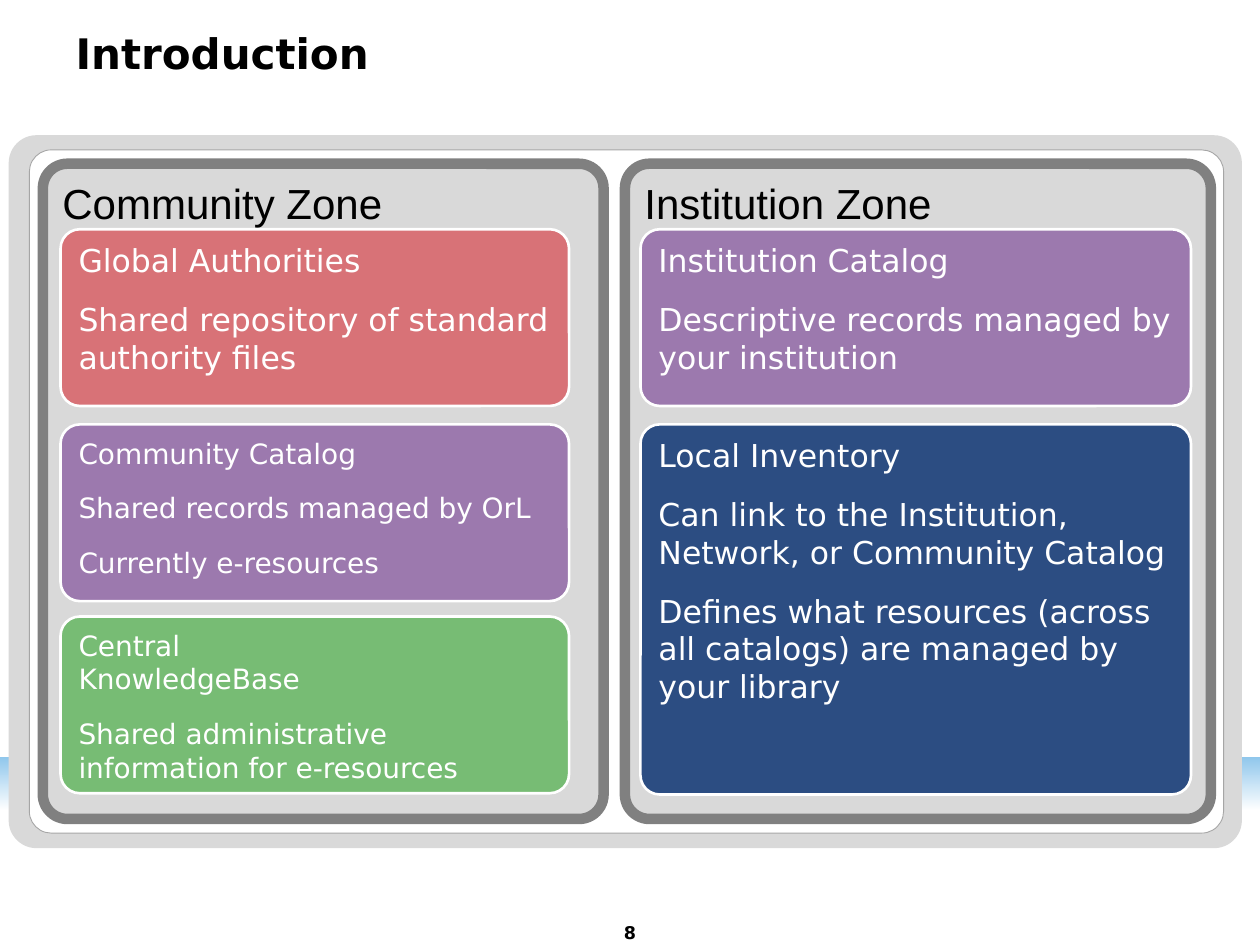
from dataclasses import dataclass

from pptx import Presentation
from pptx.dml.color import RGBColor
from pptx.enum.shapes import MSO_SHAPE as SHAPE
from pptx.enum.text import MSO_ANCHOR as ANCHOR, PP_ALIGN as ALIGN
from pptx.util import Pt

SANS = "DejaVu Sans"
PANEL = "D9D9D9"
CARD_TOPS = (131, 242.5, 352.3)
CARD_HEIGHT = 101


@dataclass
class Card:
    top: float
    height: float
    fill: str
    size: float
    lines: tuple[str, ...]


@dataclass
class Zone:
    title: str
    left: float
    width: float
    card_left: float
    card_width: float
    cards: tuple[Card, ...]


ZONES = (
    Zone("Institution Zone", 357.1, 334.8, 366, 314.6, (
        Card(CARD_TOPS[0], CARD_HEIGHT, "9C79AE", 18, (
            "Institution Catalog",
            "Descriptive records managed by your institution")),
        Card(CARD_TOPS[1], 211.5, "2C4D82", 18, (
            "Local Inventory",
            "Can link to the Institution, Network, or Community Catalog",
            "Defines what resources (across all catalogs) are managed by "
            "your library")),
    )),
    Zone("Community Zone", 24.5, 320.4, 34.6, 290.6, (
        Card(CARD_TOPS[0], CARD_HEIGHT, "D87277", 18, (
            "Global Authorities",
            "Shared repository of standard authority files")),
        Card(CARD_TOPS[1], CARD_HEIGHT, "9C79AE", 16, (
            "Community Catalog",
            "Shared records managed by OrL",
            "Currently e-resources")),
        Card(CARD_TOPS[2], CARD_HEIGHT, "77BC74", 16, (
            "Central\nKnowledgeBase",
            "Shared administrative information for e-resources")),
    )),
)


def rgb(value: str) -> RGBColor:
    return RGBColor.from_string(value)


def write(tf, lines: tuple[str, ...], size: float, font: str = SANS,
          color: str = "000000", bold: bool = False,
          align=ALIGN.LEFT, anchor=ANCHOR.TOP) -> None:
    tf.word_wrap = True
    tf.vertical_anchor = anchor
    for i, line in enumerate(lines):
        p = tf.paragraphs[0] if i == 0 else tf.add_paragraph()
        p.text = line
        p.alignment = align
        if i:
            p.space_before = Pt(12)
        p.font.name, p.font.size, p.font.bold = font, Pt(size), bold
        p.font.color.rgb = rgb(color)


def add_box(s, left: float, top: float, width: float, height: float,
            radius: float, fill: str, line: str = "", weight: float = 0):
    """Draw a rounded box whose corner radius is given in points."""
    sp = s.shapes.add_shape(SHAPE.ROUNDED_RECTANGLE, Pt(left), Pt(top),
                            Pt(width), Pt(height))
    sp.adjustments[0] = radius / min(width, height)
    sp.shadow.inherit = False
    sp.fill.solid()
    sp.fill.fore_color.rgb = rgb(fill)
    if line:
        sp.line.color.rgb = rgb(line)
        sp.line.width = Pt(weight)
    else:
        sp.line.fill.background()
    return sp


def add_band(s) -> None:
    band = s.shapes.add_shape(SHAPE.RECTANGLE, 0, Pt(432.7), Pt(720), Pt(54))
    band.shadow.inherit = False
    band.line.fill.background()
    band.fill.gradient()
    band.fill.gradient_angle = 270
    stops = zip(band.fill.gradient_stops, ((0, "90C7EC"), (0.57, "FFFFFF")))
    for stop, (position, color) in stops:
        stop.position = position
        stop.color.rgb = rgb(color)


def add_zone(s, zone: Zone) -> None:
    sp = add_box(s, zone.left, 93.6, zone.width, 374.4, 14, PANEL, "808080", 6)
    write(sp.text_frame, (zone.title,), 24, "Arial")
    for card in zone.cards:
        sp = add_box(s, zone.card_left, card.top, zone.card_width, card.height,
                     11, card.fill, "FFFFFF", 1.5)
        write(sp.text_frame, card.lines, card.size, color="FFFFFF")


def main() -> None:
    prs = Presentation()
    prs.slide_width, prs.slide_height = Pt(720), Pt(540)
    s = prs.slides.add_slide(prs.slide_layouts[5])

    # Title
    title = s.shapes.title
    title.left, title.top, title.width, title.height = (
        Pt(36), Pt(9.4), Pt(648), Pt(41.8))
    write(title.text_frame, ("Introduction",), 24, bold=True,
          anchor=ANCHOR.MIDDLE)

    # Slide number
    number = s.shapes.add_textbox(Pt(337), Pt(506.2), Pt(46), Pt(36))
    write(number.text_frame, ("8",), 10, bold=True, align=ALIGN.CENTER,
          anchor=ANCHOR.BOTTOM)

    # Background band and frame
    add_band(s)
    add_box(s, 5, 77.3, 704.7, 407.4, 15.9, PANEL)
    add_box(s, 16.8, 85.7, 682.4, 390.4, 12.5, "FFFFFF", "A6A6A6", 0.5)

    # Zones with their cards
    for zone in ZONES:
        add_zone(s, zone)

    prs.save("out.pptx")


if __name__ == "__main__":
    main()
